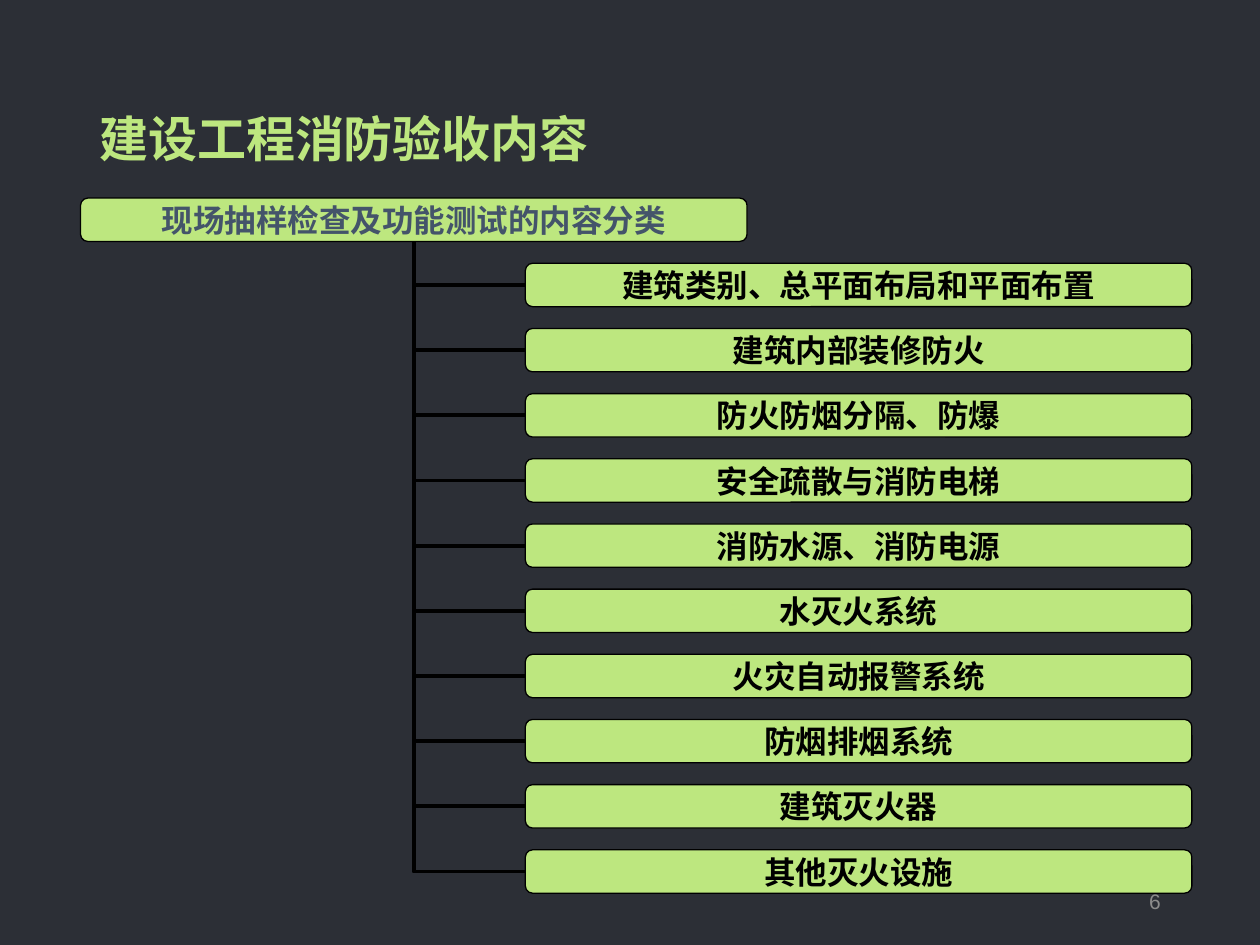
from typing import Any, NamedTuple

from pptx import Presentation
from pptx.dml.color import RGBColor
from pptx.enum.shapes import MSO_CONNECTOR, MSO_SHAPE
from pptx.enum.text import MSO_ANCHOR, PP_ALIGN
from pptx.oxml.ns import qn
from pptx.oxml.xmlchemy import OxmlElement
from pptx.slide import Slide
from pptx.util import Pt

BACKGROUND = RGBColor(0x2C, 0x2F, 0x36)
GREEN = RGBColor(0xBD, 0xE7, 0x7F)
BLACK = RGBColor(0x00, 0x00, 0x00)
SLATE = RGBColor(0x44, 0x54, 0x6A)
GRAY = RGBColor(0x8C, 0x8C, 0x8C)

ROOT_LEFT, ROOT_TOP = 46, 113.2
CHILD_LEFT = 300.2
BOX_WIDTH, BOX_HEIGHT = 380.9, 24.8
ROW_STEP = 37.24
TRUNK_LEFT = ROOT_LEFT + BOX_WIDTH / 2

ROOT_TEXT = "现场抽样检查及功能测试的内容分类"
CATEGORIES = (
    "建筑类别、总平面布局和平面布置",
    "建筑内部装修防火",
    "防火防烟分隔、防爆",
    "安全疏散与消防电梯",
    "消防水源、消防电源",
    "水灭火系统",
    "火灾自动报警系统",
    "防烟排烟系统",
    "建筑灭火器",
    "其他灭火设施",
)


class Area(NamedTuple):
    left: float
    top: float
    width: float
    height: float


class Label(NamedTuple):
    text: str
    area: Area
    size: float
    color: RGBColor
    bold: bool
    alignment: PP_ALIGN
    line_spacing: float = 1.0


def apply_format(target: Any, values: dict[str, Any]) -> None:
    for name, value in values.items():
        setattr(target, name, value)


def write_text(shape: Any, label: Label, frame_format: dict[str, Any]) -> None:
    frame = shape.text_frame
    apply_format(frame, {"vertical_anchor": MSO_ANCHOR.MIDDLE, **frame_format})
    paragraph = frame.paragraphs[0]
    paragraph.text = label.text
    apply_format(paragraph, {"alignment": label.alignment, "line_spacing": label.line_spacing})
    font = paragraph.runs[0].font
    apply_format(font, {"name": "Arial", "size": Pt(label.size), "bold": label.bold})
    font.color.rgb = label.color


def add_label(slide: Slide, label: Label) -> None:
    shape = slide.shapes.add_textbox(*map(Pt, label.area))
    write_text(shape, label, {"word_wrap": True})


def add_box(slide: Slide, text: str, left: float, top: float, color: RGBColor) -> None:
    area = Area(left, top, BOX_WIDTH, BOX_HEIGHT)
    shape = slide.shapes.add_shape(MSO_SHAPE.ROUNDED_RECTANGLE, *map(Pt, area))
    shape.adjustments[0] = 0.167
    shape.shadow.inherit = False
    shape.fill.solid()
    shape.fill.fore_color.rgb = GREEN
    shape.line.color.rgb = BLACK
    shape.line.width = Pt(0.75)
    margins = {f"margin_{side}": Pt(0) for side in ("left", "top", "right", "bottom")}
    label = Label(text, area, 18, color, True, PP_ALIGN.CENTER)
    write_text(shape, label, {"word_wrap": False, **margins})


def add_branch(slide: Slide, row_top: float) -> None:
    ends = (TRUNK_LEFT, ROOT_TOP + BOX_HEIGHT, CHILD_LEFT, row_top + BOX_HEIGHT / 2)
    connector = slide.shapes.add_connector(MSO_CONNECTOR.ELBOW, *map(Pt, ends))
    connector.line.color.rgb = BLACK
    connector.line.width = Pt(2.25)
    properties = connector._element.spPr
    properties.find(qn("a:xfrm")).set("rot", "10800000")
    properties.find(qn("a:prstGeom")).set("prst", "bentConnector2")
    properties.append(OxmlElement("a:effectLst"))


def main() -> None:
    """Build the slide on the contents of fire protection acceptance."""
    presentation = Presentation()
    apply_format(presentation, {"slide_width": Pt(720), "slide_height": Pt(540)})
    slide = presentation.slides.add_slide(presentation.slide_layouts[6])
    slide.background.fill.solid()
    slide.background.fill.fore_color.rgb = BACKGROUND

    title_area = Area(49.7, 28.8, 620.6, 104.4)
    add_label(slide, Label("建设工程消防验收内容", title_area, 28, GREEN, True, PP_ALIGN.LEFT, 0.9))
    row_tops = [ROOT_TOP + ROW_STEP * row for row in range(1, len(CATEGORIES) + 1)]
    for row_top in row_tops:
        add_branch(slide, row_top)
    add_box(slide, ROOT_TEXT, ROOT_LEFT, ROOT_TOP, SLATE)
    for category, row_top in zip(CATEGORIES, row_tops):
        add_box(slide, category, CHILD_LEFT, row_top, BLACK)
    number_area = Area(508.3, 500.4, 162, 28.8)
    add_label(slide, Label("6", number_area, 12, GRAY, False, PP_ALIGN.RIGHT))
    presentation.save("out.pptx")


if __name__ == "__main__":
    main()
